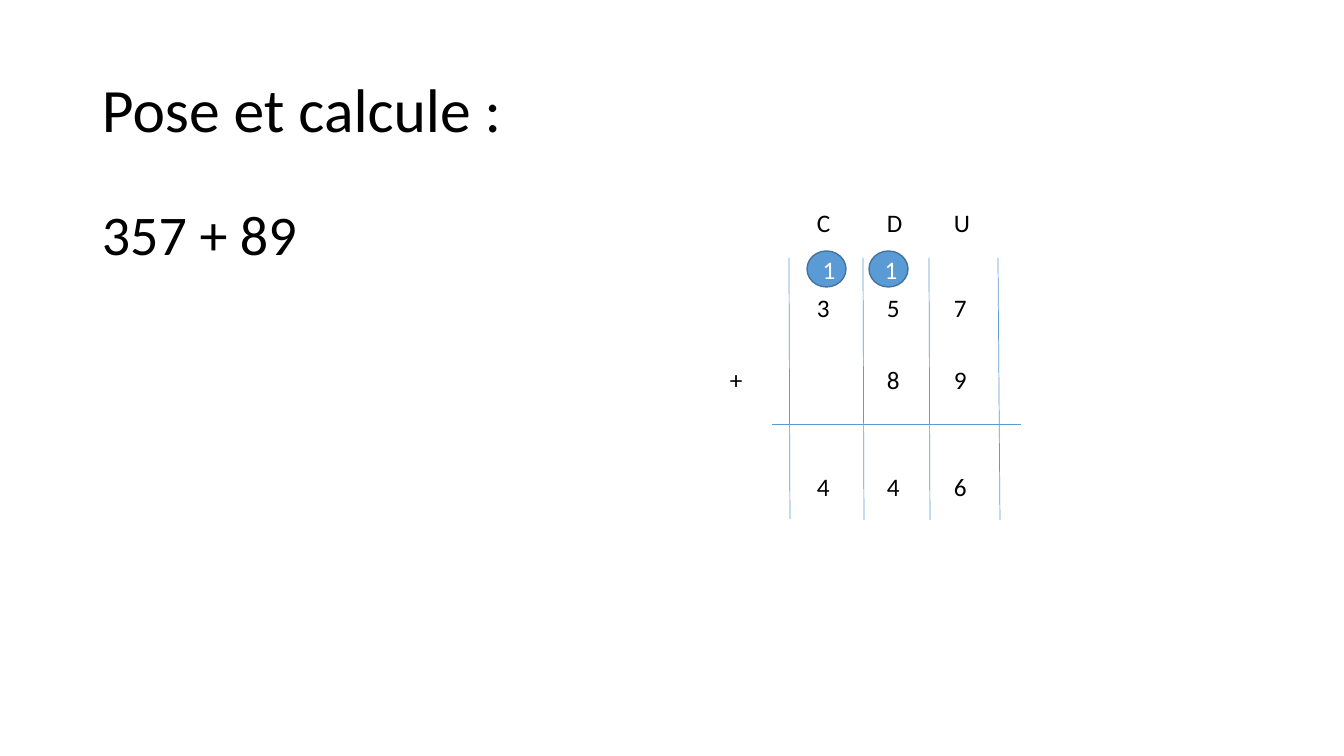
import pptx
import pptx.util
import pptx.dml.color
import pptx.enum.shapes
import pptx.enum.text
from lxml import etree

# Content: columns are hundreds (C), tens (D), units (U); lengths in px
COLORS = {"text": "000000", "blue": "5B9BD5", "edge": "43739E", "white": "FFFFFF"}
FONT = "Calibri"
TITLE = "Pose et calcule :"
SUM = "357 + 89"
COLUMNS = [807, 877, 944]
ROWS = [(202, "CDU"), (287, "357"), (359, " 89"), (466, "446")]
PLUS = (720, 359)
CARRIES = [(807, "1"), (869, "1")]
RULES = [(789, 258, 790, 519), (863, 258, 864, 520), (929, 258, 930, 520),
         (998, 258, 1000, 520), (772, 424, 1021, 424)]
CELL_W, CELL_H = 39, 40
CARRY_TOP, CARRY_H = 251, 36


def px(n):
    return pptx.util.Emu(round(n * 914400 / 100.8))


def rgb(name):
    return pptx.dml.color.RGBColor.from_string(COLORS[name])


def write(sp, text, size, color="text", anchor="TOP"):
    tf = sp.text_frame
    tf.word_wrap = True
    tf.vertical_anchor = getattr(pptx.enum.text.MSO_ANCHOR, anchor)
    p = tf.paragraphs[0]
    r = p.add_run()
    r.text = text
    r.font.name = FONT
    r.font.size = pptx.util.Pt(size)
    r.font.color.rgb = rgb(color)
    return p


def add_text(s, box, text, size, anchor="TOP"):
    sp = s.shapes.add_textbox(*map(px, box))
    return write(sp, text, size, anchor=anchor)


def add_rule(s, ends):
    line = s.shapes.add_connector(pptx.enum.shapes.MSO_CONNECTOR.STRAIGHT, *map(px, ends))
    line.line.color.rgb = rgb("blue")
    line.line.width = pptx.util.Pt(0.5)
    etree.SubElement(line._element.spPr, pptx.oxml.ns.qn("a:effectLst"))


def add_carry(s, left, digit):
    sp = s.shapes.add_shape(pptx.enum.shapes.MSO_SHAPE.OVAL,
                            *map(px, (left, CARRY_TOP, CELL_W, CARRY_H)))
    sp.shadow.inherit = False
    sp.fill.solid()
    sp.fill.fore_color.rgb = rgb("blue")
    sp.line.color.rgb = rgb("edge")
    sp.line.width = pptx.util.Pt(1)
    p = write(sp, digit, 18, "white", "MIDDLE")
    p.alignment = pptx.enum.text.PP_ALIGN.CENTER


def main():
    prs = pptx.Presentation()
    prs.slide_width, prs.slide_height = px(1344), px(756)
    s = prs.slides.add_slide(prs.slide_layouts[6])

    # Instruction and sum
    p = add_text(s, (92, 40, 1159, 146), TITLE, 44, "MIDDLE")
    p.line_spacing = 0.9
    p = add_text(s, (92, 202, 1159, 480), SUM, 40)
    p.line_spacing = 0.9
    p.space_before = pptx.util.Pt(10)

    # Column rules and result line
    for ends in RULES:
        add_rule(s, ends)

    # Headings and digits
    for top, digits in ROWS:
        for left, digit in zip(COLUMNS, digits):
            if digit != " ":
                add_text(s, (left, top, CELL_W, CELL_H), digit, 18)
    add_text(s, (*PLUS, CELL_W, CELL_H), "+", 18)

    # Carried digits
    for left, digit in CARRIES:
        add_carry(s, left, digit)

    prs.save("out.pptx")


if __name__ == "__main__":
    main()
